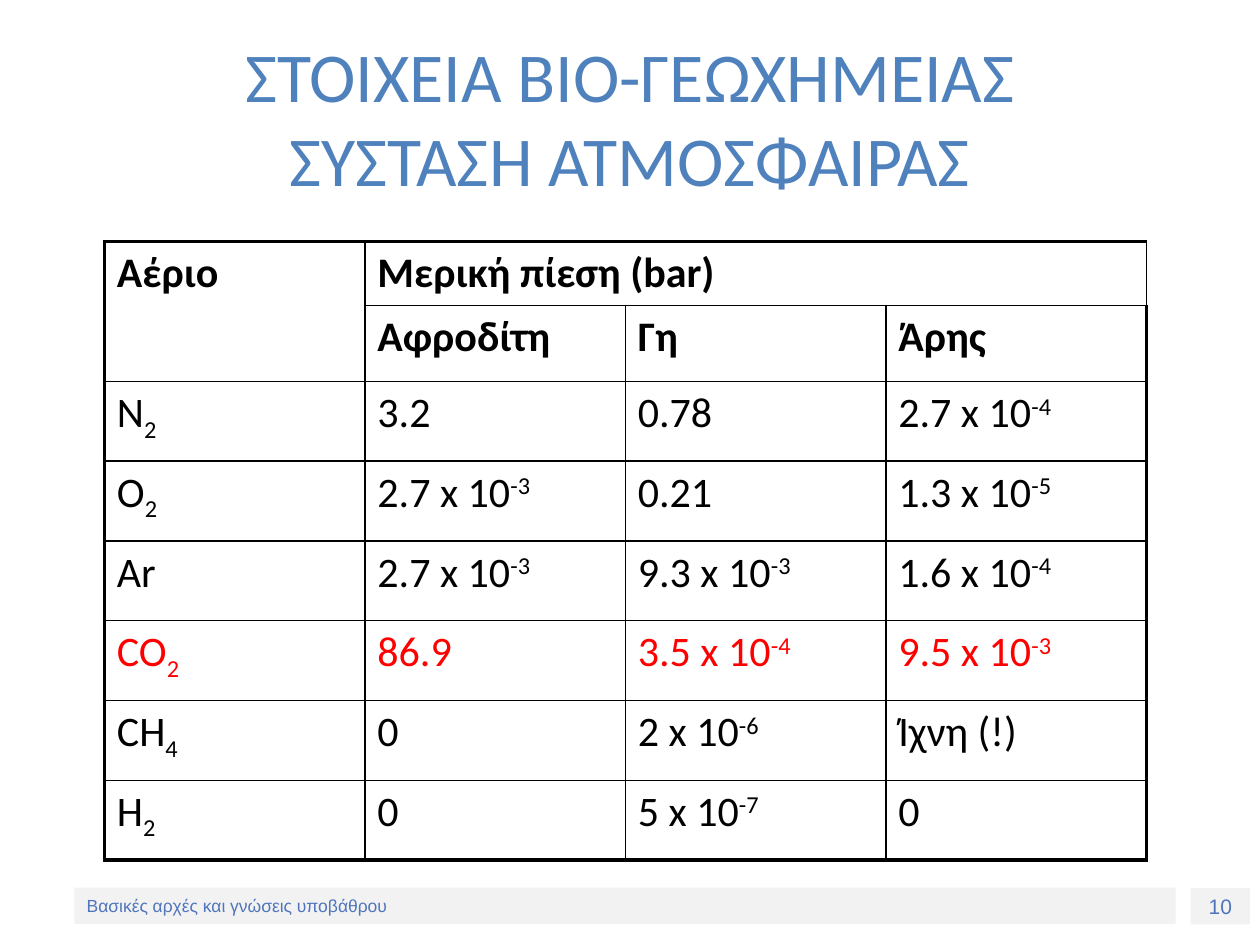
from lxml import etree
from pptx import Presentation
from pptx.dml.color import RGBColor
from pptx.enum import shapes, text
from pptx.oxml.ns import qn
from pptx.util import Pt

BLACK, RED = "000000", "FF0000"
TITLE_BLUE, FOOTER_BLUE, FOOTER_GREY = "4F81BD", "5075BC", "F2F2F2"
THIN, THICK = 1, 2.25
BASELINES = {"_": -25000, "^": 30000}

# "_" starts a subscript and "^" a superscript
HEADER = [
    ["Αέριο", "Μερική πίεση (bar)", "", ""],
    ["", "Αφροδίτη", "Γη", "Άρης"],
]
GASES = [
    ["N_2", "3.2", "0.78", "2.7 x 10^-4"],
    ["O_2", "2.7 x 10^-3", "0.21", "1.3 x 10^-5"],
    ["Ar", "2.7 x 10^-3", "9.3 x 10^-3", "1.6 x 10^-4"],
    ["CO_2", "86.9", "3.5 x 10^-4", "9.5 x 10^-3"],
    ["CH_4", "0", "2 x 10^-6", "Ίχνη (!)"],
    ["H_2", "0", "5 x 10^-7", "0"],
]
ROW_HEIGHTS = [36.5, 43.5] + [45.6] * len(GASES)
COLUMN_WIDTH = 148.85


def rgb(hex_color):
    return RGBColor.from_string(hex_color)


def set_font(paragraph, name, size, color, bold=False):
    font = paragraph.font
    font.name, font.size, font.bold = name, Pt(size), bold
    font.color.rgb = rgb(color)


def add_title(slide, wording):
    title = slide.shapes.add_textbox(Pt(36), Pt(21.6), Pt(648), Pt(90))
    frame = title.text_frame
    frame.word_wrap = True
    frame.vertical_anchor = text.MSO_ANCHOR.MIDDLE
    heading = frame.paragraphs[0]
    heading.text = wording
    heading.alignment = text.PP_ALIGN.CENTER
    set_font(heading, "Calibri", 40, TITLE_BLUE)


def add_footer_bar(slide, wording, left, top, width, size, alignment):
    bar = slide.shapes.add_shape(shapes.MSO_SHAPE.RECTANGLE,
                                 Pt(left), Pt(top), Pt(width), Pt(20.9))
    bar.shadow.inherit = False
    bar.fill.solid()
    bar.fill.fore_color.rgb = rgb(FOOTER_GREY)
    bar.line.fill.background()
    frame = bar.text_frame
    frame.word_wrap = True
    frame.vertical_anchor = text.MSO_ANCHOR.MIDDLE
    label = frame.paragraphs[0]
    label.text = wording
    label.alignment = alignment
    set_font(label, "Arial", size, FOOTER_BLUE)


def write_formula(paragraph, formula):
    """Write the text, with the part after a mark lowered or raised."""
    mark = next((m for m in BASELINES if m in formula), None)
    if mark is None:
        paragraph.add_run().text = formula
        return
    base, _, script = formula.partition(mark)
    paragraph.add_run().text = base
    script_run = paragraph.add_run()
    script_run.text = script
    script_run.font._element.set("baseline", str(BASELINES[mark]))


def set_borders(cell, widths):
    """Draw black borders, given as {side: points} in the order L, R, T, B."""
    properties = cell._tc.get_or_add_tcPr()
    for side, width in widths.items():
        line = etree.SubElement(properties, qn(f"a:ln{side}"), w=str(Pt(width)))
        fill = etree.SubElement(line, qn("a:solidFill"))
        etree.SubElement(fill, qn("a:srgbClr"), val=BLACK)


def add_pressure_table(slide):
    rows = HEADER + GASES
    last_row, last_column = len(rows) - 1, len(rows[0]) - 1
    table = slide.shapes.add_table(
        len(rows), len(rows[0]), Pt(59.6), Pt(138),
        Pt(COLUMN_WIDTH * len(rows[0])), Pt(sum(ROW_HEIGHTS))).table
    table.first_row = table.horz_banding = False
    for column in table.columns:
        column.width = Pt(COLUMN_WIDTH)
    for r, values in enumerate(rows):
        table.rows[r].height = Pt(ROW_HEIGHTS[r])
        for c, value in enumerate(values):
            cell = table.cell(r, c)
            set_borders(cell, {
                "L": THICK if c == 0 else THIN,
                "R": THICK if c == last_column else THIN,
                "T": THICK if r == 0 else THIN,
                "B": THICK if r == last_row else THIN,
            })
            cell.fill.background()
            paragraph = cell.text_frame.paragraphs[0]
            set_font(paragraph, "Calibri", 24,
                     RED if values[0] == "CO_2" else BLACK,
                     bold=r < len(HEADER))
            if value:
                write_formula(paragraph, value)
    table.cell(0, 0).merge(table.cell(1, 0))
    table.cell(0, 1).merge(table.cell(0, last_column))


def main():
    deck = Presentation()
    deck.slide_width, deck.slide_height = Pt(720), Pt(540)
    slide = deck.slides.add_slide(deck.slide_layouts[6])
    add_footer_bar(slide, "10", 680.4, 507.4, 33.9, 12, text.PP_ALIGN.CENTER)
    add_footer_bar(slide, "Βασικές αρχές και γνώσεις υποβάθρου",
                   42.5, 507.2, 629.3, 10, text.PP_ALIGN.LEFT)
    add_title(slide, "ΣΤΟΙΧΕΙΑ ΒΙΟ-ΓΕΩΧΗΜΕΙΑΣ\vΣΥΣΤΑΣΗ ΑΤΜΟΣΦΑΙΡΑΣ")
    add_pressure_table(slide)
    deck.save("out.pptx")


if __name__ == "__main__":
    main()
